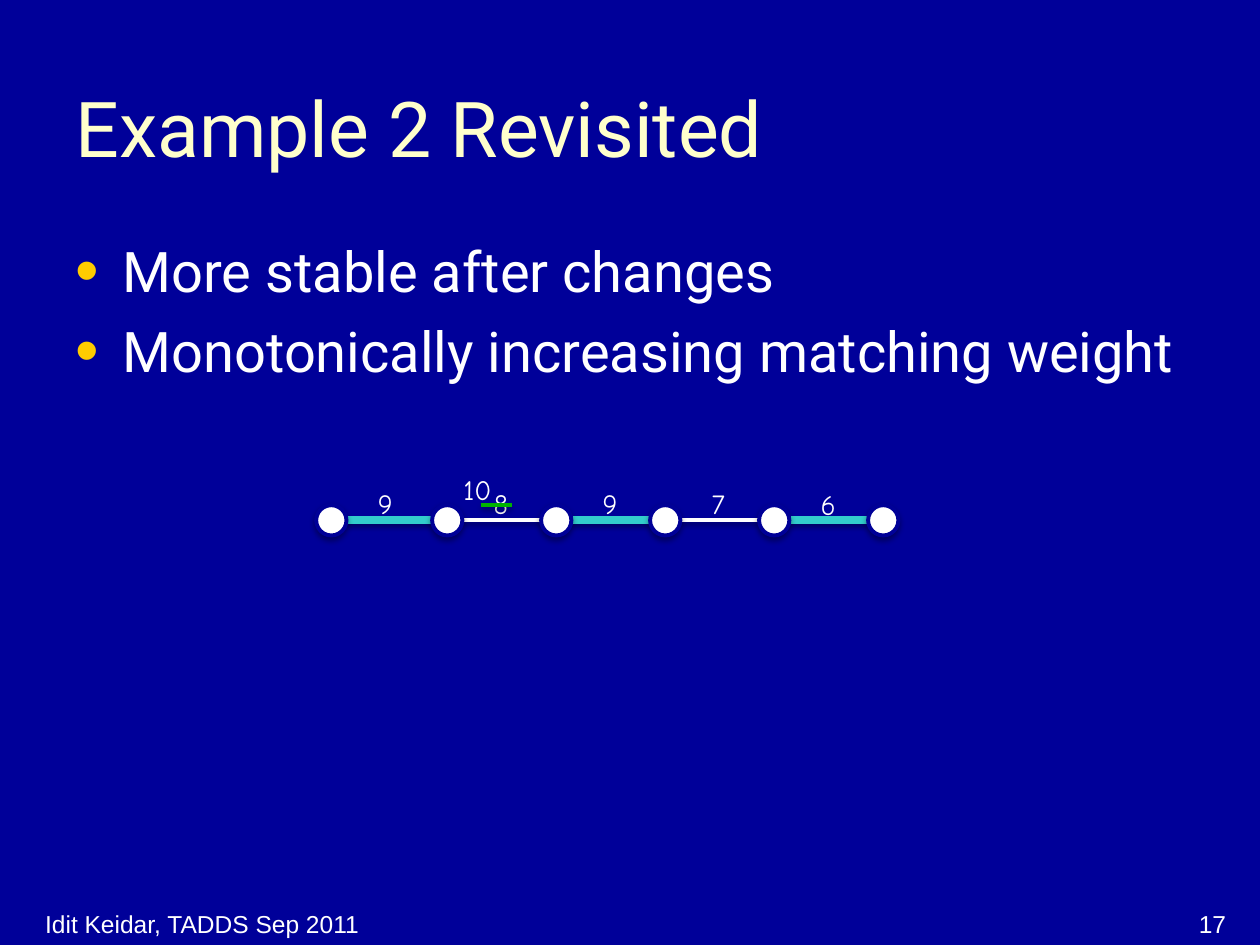
from lxml.etree import SubElement
from pptx import Presentation
from pptx.dml.color import RGBColor
from pptx.enum.shapes import MSO_CONNECTOR as Connector, MSO_SHAPE as Shape
from pptx.enum.text import MSO_ANCHOR as Anchor, MSO_AUTO_SIZE as AutoSize, PP_ALIGN as Align
from pptx.oxml.ns import qn
from pptx.util import Inches, Pt

COLORS = {
    "background": "000099",
    "title": "FFFFCC",
    "text": "FFFFFF",
    "bullet": "FFCC00",
    "matched": "33CCCC",
    "node_rim": "000097",
    "strike": "00B300",
    "shadow": "000000",
}
WIDTH, HEIGHT = 10, 7.5
MARGIN = 0.05 * WIDTH
FOOTER_TOP, FOOTER_HEIGHT = 7.07, 0.43
CHAIN_Y = 0.55 * HEIGHT + 0.005
NODE_SIZE = 0.24
NODE_STEP = 0.865
NODE_XS = [2.63] + [3.55 + NODE_STEP * column for column in range(5)]
EDGES = [
    ("9", True, 3.81),
    ("8", False, 3.81),
    ("9", True, 3.81),
    ("7", False, 3.81),
    ("6", True, 3.82),
]


def color(name):
    return RGBColor.from_string(COLORS[name])


def add_shadow(element, opacity=35):
    properties = element._element.spPr
    effects = properties.find(qn("a:effectLst"))
    if effects is None:
        effects = SubElement(properties, qn("a:effectLst"))
    shadow = SubElement(effects, qn("a:outerShdw"), blurRad="40000", dist="23000",
                        dir="5400000", rotWithShape="0")
    tint = SubElement(shadow, qn("a:srgbClr"), val=COLORS["shadow"])
    SubElement(tint, qn("a:alpha"), val=str(opacity * 1000))


def add_bullet(paragraph):
    properties = paragraph._p.get_or_add_pPr()
    properties.set("marL", str(Inches(0.375)))
    properties.set("indent", str(-Inches(0.375)))
    tint = SubElement(properties, qn("a:buClr"))
    SubElement(tint, qn("a:srgbClr"), val=COLORS["bullet"])
    SubElement(properties, qn("a:buSzPct"), val="120000")
    SubElement(properties, qn("a:buFont"), typeface="Arial")
    SubElement(properties, qn("a:buChar"), char="•")


def add_text(slide, box, lines, font, size, tint="text", anchor=Anchor.TOP,
             align=Align.LEFT, bullets=False, grow=False):
    frame = slide.shapes.add_textbox(*map(Inches, box)).text_frame
    frame.word_wrap = True
    frame.vertical_anchor = anchor
    frame.auto_size = AutoSize.SHAPE_TO_FIT_TEXT if grow else AutoSize.NONE
    frame.text = "\n".join(lines)
    for index, paragraph in enumerate(frame.paragraphs):
        paragraph.alignment = align
        if index:
            paragraph.space_before = Pt(7)
        if bullets:
            add_bullet(paragraph)
        paragraph.font.name = font
        paragraph.font.size = Pt(size)
        paragraph.font.color.rgb = color(tint)


def add_line(slide, left, right, y, tint, width, opacity=35):
    line = slide.shapes.add_connector(
        Connector.STRAIGHT, Inches(left), Inches(y), Inches(right), Inches(y))
    line.line.color.rgb = color(tint)
    line.line.width = Pt(width)
    add_shadow(line, opacity)


def add_node(slide, x):
    radius = NODE_SIZE / 2
    node = slide.shapes.add_shape(
        Shape.OVAL, Inches(x - radius), Inches(CHAIN_Y - radius),
        Inches(NODE_SIZE), Inches(NODE_SIZE))
    node.fill.solid()
    node.fill.fore_color.rgb = color("text")
    node.line.color.rgb = color("node_rim")
    node.line.width = Pt(2.25)
    node.shadow.inherit = False
    add_shadow(node)


def add_weight(slide, left, top, weight):
    add_text(slide, (left, top, 0.55, 0.37), [weight], "Comic Neue", 16, grow=True)


def add_chain(slide):
    radius = NODE_SIZE / 2
    for start, end, (_, matched, _) in zip(NODE_XS, NODE_XS[1:], EDGES):
        tint, width = ("matched", 4.5) if matched else ("text", 2.25)
        add_line(slide, start + radius, end - radius, CHAIN_Y, tint, width)
    for x in NODE_XS:
        add_node(slide, x)
    for start, (weight, _, top) in zip(NODE_XS, EDGES):
        add_weight(slide, start + 0.27, top, weight)
    add_line(slide, 3.82, 4.06, 4.01, "strike", 2, opacity=38)
    add_weight(slide, 3.58, 3.7, "10")


def main():
    deck = Presentation()
    deck.slide_width, deck.slide_height = Inches(WIDTH), Inches(HEIGHT)
    slide = deck.slides.add_slide(deck.slide_layouts[6])
    slide.background.fill.solid()
    slide.background.fill.fore_color.rgb = color("background")

    content_width = WIDTH - 2 * MARGIN
    add_text(slide, (MARGIN, 0.25, content_width, 1.51), ["Example 2 Revisited"],
             "Roboto", 44, "title", Anchor.MIDDLE)
    add_text(slide, (MARGIN, 1.83, content_width, 5.17),
             ["More stable after changes", "Monotonically increasing matching weight"],
             "Roboto", 32, bullets=True)
    add_chain(slide)
    add_text(slide, (0.26, FOOTER_TOP, 3.32, FOOTER_HEIGHT),
             ["Idit Keidar, TADDS Sep 2011"], "Arial", 14, anchor=Anchor.BOTTOM)
    add_text(slide, (7.5, FOOTER_TOP, 2.33, FOOTER_HEIGHT), ["17"], "Arial", 14,
             anchor=Anchor.BOTTOM, align=Align.RIGHT)
    deck.save("out.pptx")


if __name__ == "__main__":
    main()
